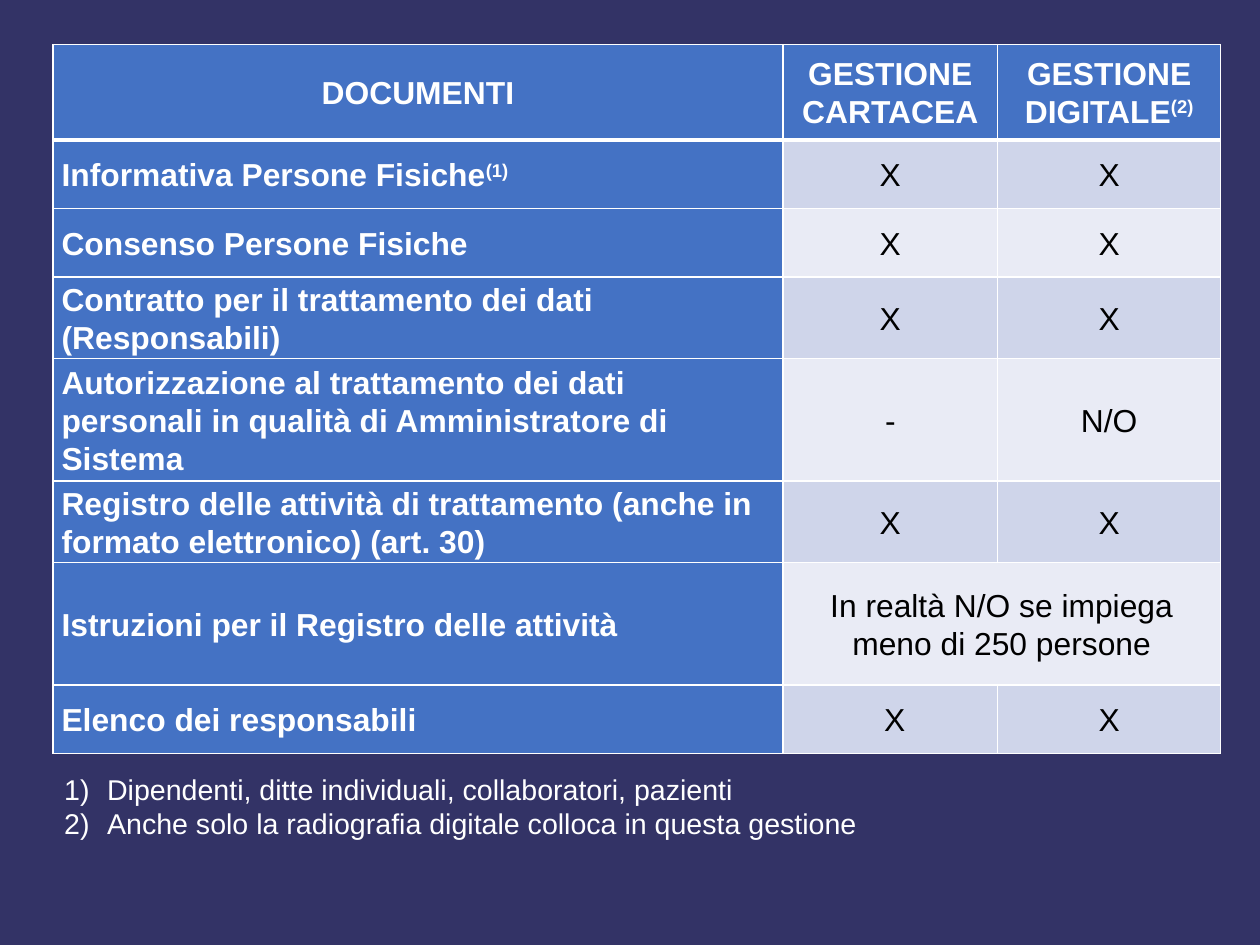
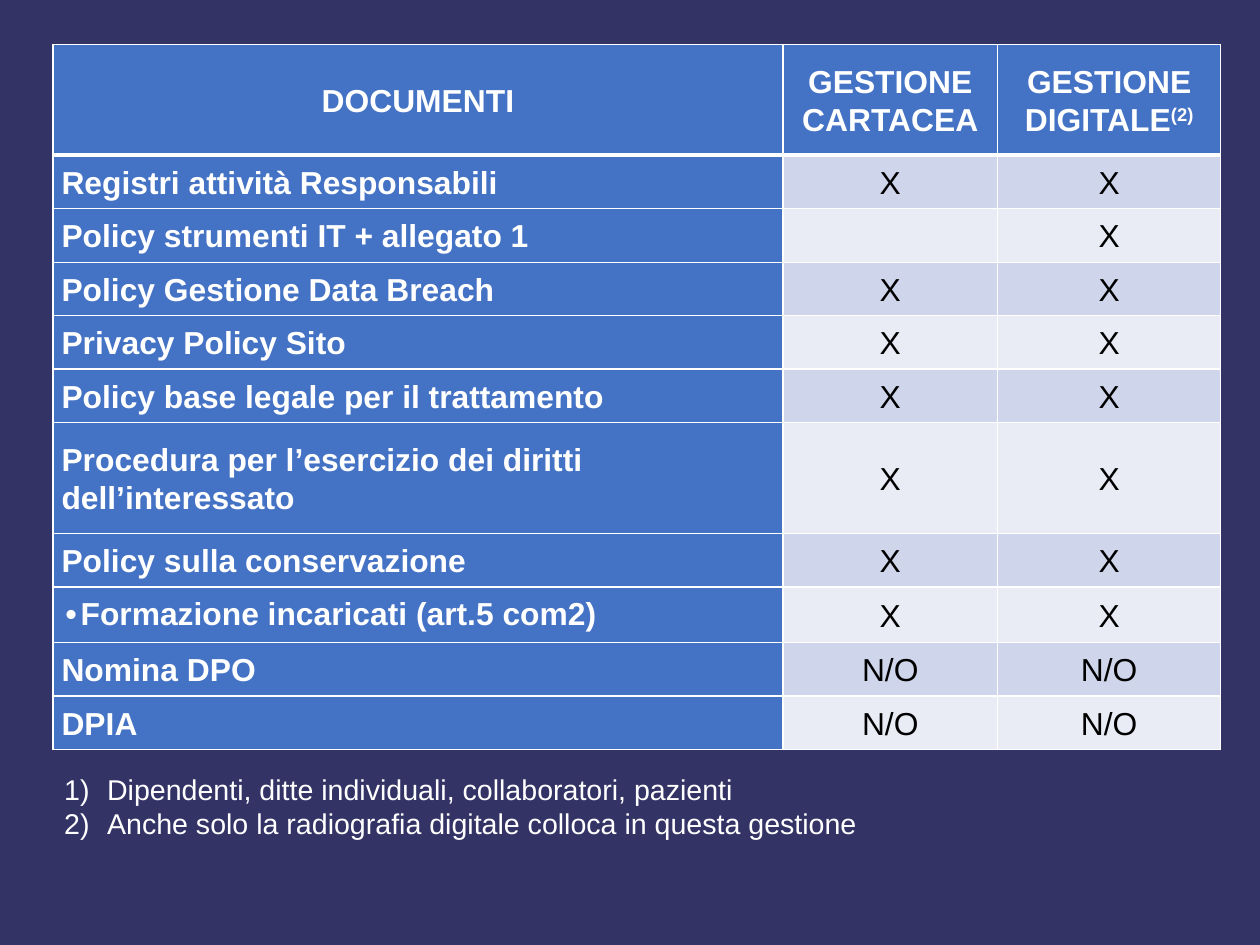
from pptx import Presentation
from pptx.dml.color import RGBColor
from pptx.enum.text import MSO_ANCHOR, MSO_AUTO_SIZE, PP_ALIGN
from pptx.oxml import parse_xml
from pptx.oxml.ns import nsdecls
from pptx.util import Pt

NAVY = RGBColor(0x33, 0x33, 0x66)
BLUE = RGBColor(0x44, 0x72, 0xC4)
BAND_DARK = RGBColor(0xCF, 0xD5, 0xEA)
BAND_LIGHT = RGBColor(0xE9, 0xEB, 0xF5)
WHITE = RGBColor(0xFF, 0xFF, 0xFF)
BLACK = RGBColor(0, 0, 0)
FONT = "Arial"

LEFT, TABLE_TOP, NOTES_TOP = 33.4, 28, 482.1
COLUMN_WIDTHS = (459.8, 135.4, 140.4)
HEADINGS = ("DOCUMENTI", "GESTIONE CARTACEA", "GESTIONE DIGITALE^(2)")
NOTES = (
    "Dipendenti, ditte individuali, collaboratori, pazienti",
    "Anche solo la radiografia digitale colloca in questa gestione",
)

# Per slide: header height, then (row height, document, paper, digital);
# "^" starts a superscript, None merges the cell with the one on its left.
CHECKLISTS = (
    (60.2, (
        (43.2, "Informativa Persone Fisiche^(1)", "X", "X"),
        (43.2, "Consenso Persone Fisiche", "X", "X"),
        (43.2, "Contratto per il trattamento dei dati (Responsabili)", "X", "X"),
        (60.2, "Autorizzazione al trattamento dei dati personali in qualità "
               "di Amministratore di Sistema", "-", "N/O"),
        (43.2, "Registro delle attività di trattamento (anche in formato "
               "elettronico) (art. 30)", "X", "X"),
        (77, "Istruzioni per il Registro delle attività",
         "In realtà N/O se impiega meno di 250 persone", None),
        (43.2, "Elenco dei responsabili", " X", "X"),
    )),
    (69.8, (
        (33.7, "Registri attività Responsabili", "X", "X"),
        (33.7, "Policy strumenti IT + allegato 1", "", "X"),
        (33.7, "Policy Gestione Data Breach", "X", "X"),
        (33.7, "Privacy Policy Sito", "X", "X"),
        (33.7, "Policy base legale per il trattamento", "X", "X"),
        (69.8, "Procedura per l’esercizio dei diritti dell’interessato", "X", "X"),
        (33.7, "Policy sulla conservazione", "X", "X"),
        (35.2, "•Formazione incaricati (art.5 com2)", "X", "X"),
        (33.7, "Nomina DPO", "N/O", "N/O"),
        (33.7, "DPIA", "N/O", "N/O"),
    )),
)


def add_borders(cell, top, bottom):
    """Draw white cell borders, 1 pt at the sides; call before setting the fill."""
    for side, width in (("L", 1), ("R", 1), ("T", top), ("B", bottom)):
        cell._tc.get_or_add_tcPr().append(parse_xml(
            f'<a:ln{side} {nsdecls("a")} w="{Pt(width)}"><a:solidFill>'
            f'<a:srgbClr val="{WHITE}"/></a:solidFill></a:ln{side}>'))


def fill_cell(cell, text, emphasized, centered):
    cell.vertical_anchor = MSO_ANCHOR.MIDDLE
    cell.margin_left = cell.margin_right = Pt(5.4)
    cell.margin_top = cell.margin_bottom = 0
    paragraph = cell.text_frame.paragraphs[0]
    paragraph.alignment = PP_ALIGN.CENTER if centered else PP_ALIGN.LEFT
    paragraph.line_spacing = 1.07
    paragraph.font.name = FONT
    paragraph.font.size = Pt(20)
    paragraph.font.bold = emphasized
    paragraph.font.color.rgb = WHITE if emphasized else BLACK
    if text.startswith("•"):
        bullet = paragraph.add_run()
        bullet.text = "•"
        bullet.font.name = "Courier New"
        text = text[1:]
    body, _, superscript = text.partition("^")
    if body:
        paragraph.add_run().text = body
    if superscript:
        reference = paragraph.add_run()
        reference.text = superscript
        reference._r.get_or_add_rPr().set("baseline", "30000")


prs = Presentation()
prs.slide_width, prs.slide_height = Pt(793.75), Pt(595.25)
background = prs.slide_master.background.fill
background.solid()
background.fore_color.rgb = NAVY

for header_height, documents in CHECKLISTS:
    slide = prs.slides.add_slide(prs.slide_layouts[6])

    notes = slide.shapes.add_textbox(Pt(LEFT), Pt(NOTES_TOP), Pt(518.4), Pt(51)).text_frame
    notes.word_wrap = False
    notes.auto_size = MSO_AUTO_SIZE.SHAPE_TO_FIT_TEXT
    notes.vertical_anchor = MSO_ANCHOR.MIDDLE
    for index, note in enumerate(NOTES):
        paragraph = notes.paragraphs[0] if index == 0 else notes.add_paragraph()
        paragraph.text = note
        properties = paragraph._p.get_or_add_pPr()
        properties.set("marL", str(Pt(27)))
        properties.set("indent", str(-Pt(27)))
        properties.append(parse_xml(f'<a:buAutoNum {nsdecls("a")} type="arabicParenR"/>'))
        paragraph.font.name = FONT
        paragraph.font.size = Pt(18)
        paragraph.font.color.rgb = WHITE

    rows = ((header_height, *HEADINGS), *documents)
    checklist = slide.shapes.add_table(
        len(rows), len(COLUMN_WIDTHS), Pt(LEFT), Pt(TABLE_TOP),
        Pt(sum(COLUMN_WIDTHS)), Pt(sum(row[0] for row in rows))).table
    checklist.first_col = True
    for column, width in zip(checklist.columns, COLUMN_WIDTHS):
        column.width = Pt(width)
    for r, (height, *texts) in enumerate(rows):
        checklist.rows[r].height = Pt(height)
        for c, text in enumerate(texts):
            cell = checklist.cell(r, c)
            emphasized = r == 0 or c == 0
            add_borders(cell, top=3 if r == 1 else 1, bottom=3 if r == 0 else 1)
            cell.fill.solid()
            band = BAND_DARK if r % 2 else BAND_LIGHT
            cell.fill.fore_color.rgb = BLUE if emphasized else band
            if text is None:
                checklist.cell(r, c - 1).merge(cell)
            else:
                fill_cell(cell, text, emphasized, centered=r == 0 or c > 0)

prs.save("out.pptx")
